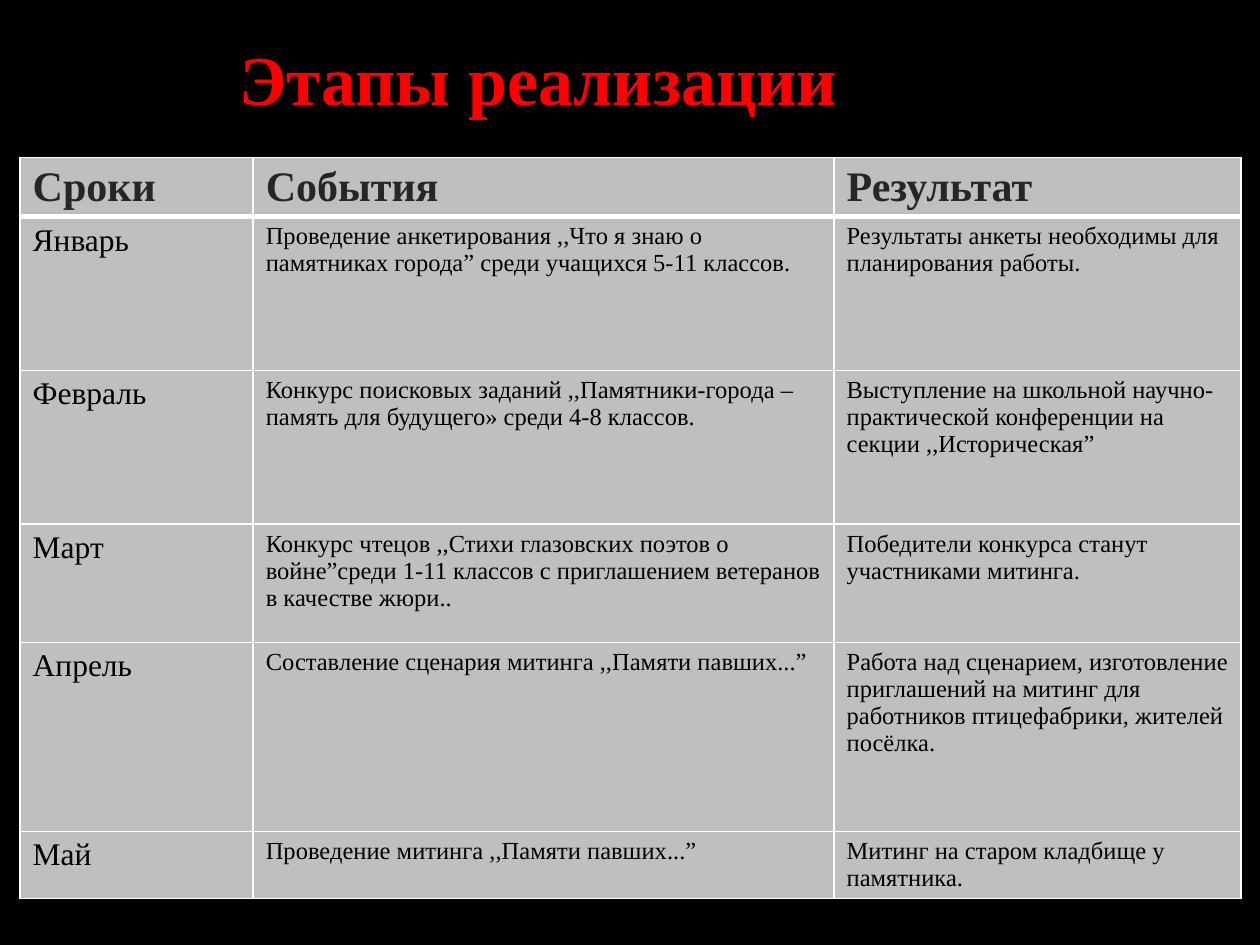
from pptx import Presentation
from pptx.dml.color import RGBColor
from pptx.enum.text import MSO_ANCHOR, PP_ALIGN
from pptx.oxml import parse_xml
from pptx.oxml.ns import nsdecls
from pptx.util import Pt

BLACK = RGBColor(0x00, 0x00, 0x00)
RED = RGBColor(0xFF, 0x00, 0x00)
DARK = RGBColor(0x26, 0x26, 0x26)
GRAY = RGBColor(0xBF, 0xBF, 0xBF)
WHITE = RGBColor(0xFF, 0xFF, 0xFF)
FONT = "Times New Roman"

HEADER = {"name": FONT, "size": Pt(24), "bold": True}
MONTH = {"name": FONT, "size": Pt(18), "bold": False}
DETAIL = {"name": FONT, "size": Pt(14), "bold": False}
TITLE = {"name": FONT, "size": Pt(40), "bold": True}

COL_WIDTHS = [133.2, 331.92, 232.56]
ROW_HEIGHTS = [33.84, 87.84, 87.84, 67.68, 108, 38]
ROWS = [
    ("Сроки", "События", "Результат"),
    ("Январь",
     "Проведение анкетирования ,,Что я знаю о памятниках города” среди учащихся 5-11 классов.",
     "Результаты анкеты необходимы для планирования работы."),
    ("Февраль",
     "Конкурс поисковых заданий ,,Памятники-города – память для будущего» среди 4-8 классов.",
     "Выступление на школьной научно-практической конференции на секции ,,Историческая”"),
    ("Март",
     "Конкурс чтецов ,,Стихи глазовских поэтов о войне”среди 1-11 классов "
     "с приглашением ветеранов в качестве жюри..",
     "Победители конкурса станут участниками митинга."),
    ("Апрель",
     "Составление сценария митинга ,,Памяти павших...”",
     "Работа над сценарием, изготовление приглашений на митинг "
     "для работников птицефабрики, жителей посёлка."),
    ("Май",
     "Проведение митинга ,,Памяти павших...”",
     "Митинг на старом кладбище у памятника."),
]


def add_text(p, text, fmt, color):
    r = p.add_run()
    r.text = text
    for key, value in fmt.items():
        setattr(r.font, key, value)
    r.font.color.rgb = color


def set_borders(cell, widths):
    tcPr = cell._tc.get_or_add_tcPr()
    for i, (side, width) in enumerate(widths.items()):
        # Border lines come before the fill
        tcPr.insert(i, parse_xml(
            f'<a:ln{side} {nsdecls("a")} w="{Pt(width)}"><a:solidFill>'
            f'<a:srgbClr val="{WHITE}"/></a:solidFill></a:ln{side}>'))


prs = Presentation()
prs.slide_width, prs.slide_height = Pt(720), Pt(540)
s = prs.slides.add_slide(prs.slide_layouts[6])
s.background.fill.solid()
s.background.fill.fore_color.rgb = BLACK

# Schedule table
tbl = s.shapes.add_table(len(ROWS), len(COL_WIDTHS), Pt(11.5), Pt(90),
                         Pt(sum(COL_WIDTHS)), Pt(sum(ROW_HEIGHTS))).table
for col, width in zip(tbl.columns, COL_WIDTHS):
    col.width = Pt(width)
for i, (row, height, texts) in enumerate(zip(tbl.rows, ROW_HEIGHTS, ROWS)):
    row.height = Pt(height)
    for j, (cell, text) in enumerate(zip(row.cells, texts)):
        fmt = HEADER if i == 0 else MONTH if j == 0 else DETAIL
        add_text(cell.text_frame.paragraphs[0], text, fmt, DARK if i == 0 else BLACK)
        cell.fill.solid()
        cell.fill.fore_color.rgb = GRAY
        # A thick line divides the header from the months
        set_borders(cell, {"L": 1, "R": 1, "T": 3 if i == 1 else 1, "B": 3 if i == 0 else 1})

# Title, moved right of the box centre by a wide left inset
sp = s.shapes.add_textbox(Pt(-14.4), Pt(16.5), Pt(543), Pt(55.5))
tf = sp.text_frame
for key, value in {"word_wrap": True, "margin_left": Pt(108),
                   "vertical_anchor": MSO_ANCHOR.TOP}.items():
    setattr(tf, key, value)
p = tf.paragraphs[0]
p.alignment = PP_ALIGN.CENTER
add_text(p, "Этапы реализации", TITLE, RED)

prs.save("out.pptx")
